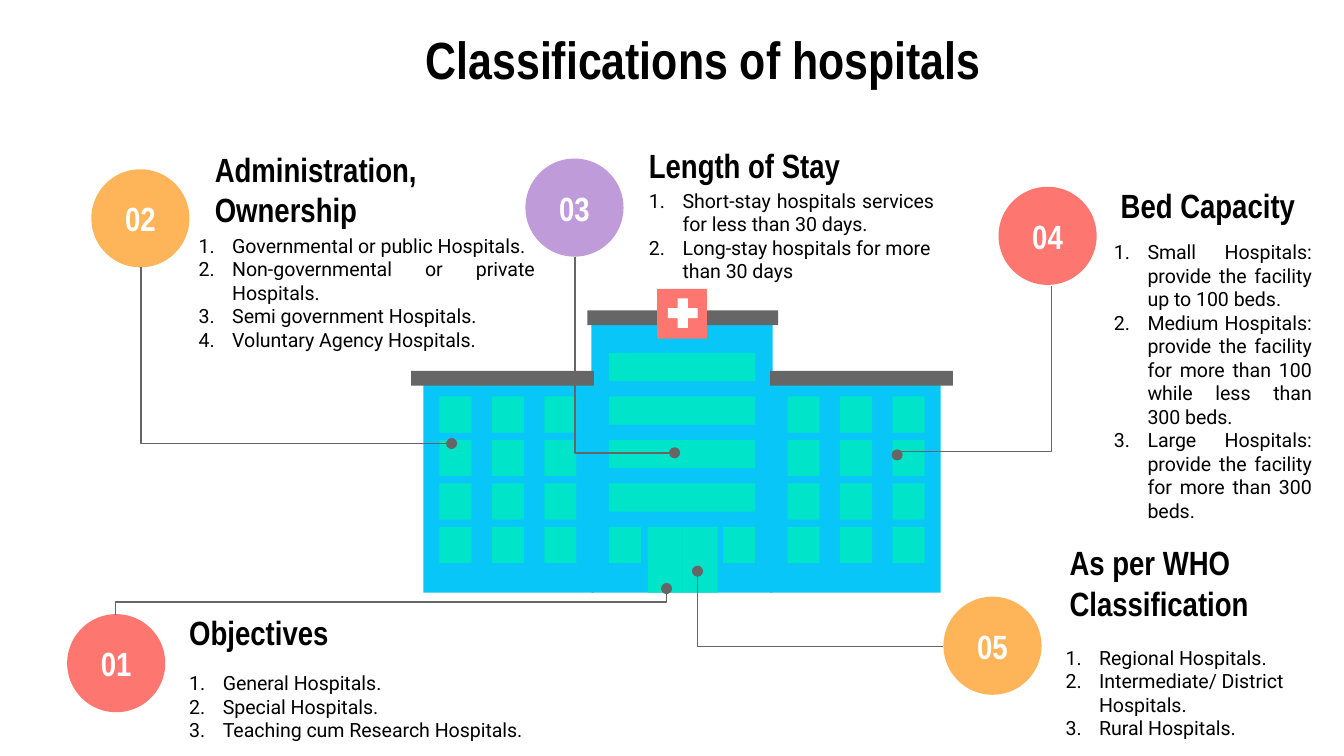
import pptx
import pptx.dml.color
import pptx.enum.shapes
import pptx.enum.text
import pptx.oxml.ns
import pptx.util
from lxml import etree

Inches = pptx.util.Inches
SHAPE = pptx.enum.shapes.MSO_SHAPE
ALIGN = pptx.enum.text.PP_ALIGN
qn = pptx.oxml.ns.qn

COLORS = {
    "black": "000000", "white": "FFFFFF", "gray": "666666", "wall": "09C6F9",
    "window": "00E4C9", "coral": "FE7670", "amber": "FEB459", "violet": "C09BD9",
}

# A 16:9 slide
presentation = pptx.Presentation()
presentation.slide_width = Inches(10)
presentation.slide_height = Inches(10 * 9 / 16)
slide = presentation.slides.add_slide(presentation.slide_layouts[6])


def add_block(kind, box, color):
    shape = slide.shapes.add_shape(kind, *map(Inches, box))
    shape.shadow.inherit = False
    shape.fill.solid()
    shape.fill.fore_color.rgb = pptx.dml.color.RGBColor.from_string(COLORS[color])
    shape.line.fill.background()
    return shape


def write_text(text, box=None, shape=None, font="Arial Narrow", size=18, color="black",
               bold=True, align=ALIGN.LEFT, numbered=False):
    """Write lines into a shape, or into a new text box when none is given."""
    shape = shape or slide.shapes.add_textbox(*map(Inches, box))
    frame = shape.text_frame
    frame.word_wrap = True
    frame.vertical_anchor = pptx.enum.text.MSO_ANCHOR.MIDDLE
    frame.margin_left = frame.margin_right = Inches(0.1)
    frame.margin_top = frame.margin_bottom = Inches(0.1)
    frame.text = text
    for paragraph in frame.paragraphs:
        paragraph.alignment = align
        if numbered:
            properties = paragraph._p.get_or_add_pPr()
            properties.set("marL", str(Inches(0.25)))
            properties.set("indent", str(Inches(-0.25)))
            bullet_color = etree.SubElement(properties, qn("a:buClr"))
            etree.SubElement(bullet_color, qn("a:srgbClr"), val=COLORS[color])
            etree.SubElement(properties, qn("a:buFont"), typeface=font)
            etree.SubElement(properties, qn("a:buAutoNum"), type="arabicPeriod")
        for style in (paragraph.font, paragraph.runs[0].font):
            style.name = font
            style.size = pptx.util.Pt(size)
            style.bold = bold
            style.color.rgb = pptx.dml.color.RGBColor.from_string(COLORS[color])
    return frame


# Walls and roofs
for box, color in [
    ((4.4, 2.42, 1.35, 1.99), "wall"),
    ((4.37, 2.31, 1.42, 0.11), "gray"),
    ((3.15, 2.86, 1.27, 1.55), "wall"),
    ((3.06, 2.76, 1.36, 0.11), "gray"),
    ((5.73, 2.86, 1.27, 1.55), "wall"),
    ((5.73, 2.76, 1.36, 0.11), "gray"),
]:
    add_block(SHAPE.RECTANGLE, box, color)

# Windows of the two wings
FLOOR_TOP, FLOOR_STEP = 2.95, 0.97 / 3
for wing_left in (3.27, 5.86):
    for row in range(4):
        for column in range(3):
            box = (wing_left + 0.39 * column, FLOOR_TOP + FLOOR_STEP * row, 0.24, 0.27)
            add_block(SHAPE.RECTANGLE, box, "window")

# Wide windows of the middle part
for row in range(-1, 3):
    add_block(SHAPE.RECTANGLE, (4.53, FLOOR_TOP + FLOOR_STEP * row, 1.09, 0.21), "window")

# Small windows and doors on the ground floor
for left, width, height in [(4.53, 0.24, 0.27), (5.38, 0.24, 0.27),
                            (4.82, 0.26, 0.49), (5.08, 0.26, 0.49)]:
    add_block(SHAPE.RECTANGLE, (left, 3.92, width, height), "window")

# Cross sign on the roof
add_block(SHAPE.RECTANGLE, (4.89, 2.15, 0.37, 0.37), "coral")
cross = add_block(SHAPE.CROSS, (4.97, 2.22, 0.22, 0.22), "white")
cross.adjustments[0] = 0.33

# Title
write_text("Classifications of hospitals", box=(0.73, 0.23, 9, 0.41), size=28,
           align=ALIGN.CENTER)

# Topics: a numbered circle, a heading and a list each
topics = [
    ("01", "coral", (0.5, 4.57), "Objectives", (1.31, 4.56, 1.67, 0.29),
     ["General Hospitals.", "Special Hospitals.", "Teaching cum Research Hospitals."],
     (1.31, 4.87, 2.77, 0.77), ALIGN.JUSTIFY),
    ("02", "amber", (0.68, 1.26), "Administration, Ownership", (1.5, 1.26, 2.04, 0.29),
     ["Governmental or public Hospitals.", "Non-governmental or private Hospitals.",
      "Semi government Hospitals.", "Voluntary Agency Hospitals."],
     (1.38, 1.96, 2.7, 0.43), ALIGN.JUSTIFY),
    ("03", "violet", (3.91, 1.18), "Length of Stay", (4.73, 1.08, 1.67, 0.29),
     ["Short-stay hospitals services for less than 30 days.",
      "Long-stay hospitals for more than 30 days"],
     (4.73, 1.54, 2.32, 0.43), ALIGN.JUSTIFY),
    ("04", "coral", (7.43, 1.39), "Bed Capacity", (8.24, 1.38, 1.67, 0.29),
     ["Small Hospitals: provide the facility up to 100 beds.",
      "Medium Hospitals: provide the facility for more than 100 while less than 300 beds.",
      "Large Hospitals: provide the facility for more than 300 beds."],
     (8.19, 1.81, 1.67, 2.05), ALIGN.JUSTIFY),
    ("05", "amber", (7.02, 4.44), "As per WHO Classification", (7.86, 4.19, 1.67, 0.29),
     ["Regional Hospitals.", "Intermediate/ District Hospitals.", "Rural Hospitals."],
     (7.83, 4.94, 1.9, 0.43), ALIGN.LEFT),
]
circles = {}
lists = {}
for number, color, corner, heading, heading_box, items, list_box, align in topics:
    circles[number] = add_block(SHAPE.OVAL, (*corner, 0.73, 0.73), color)
    write_text(number, shape=circles[number], color="white", align=ALIGN.CENTER)
    write_text(heading, box=heading_box)
    lists[number] = write_text("\n".join(items), box=list_box, font="Roboto", size=10.5,
                               bold=False, align=align, numbered=True)
# The long-stay item is the only one in its list that is not justified
lists["03"].paragraphs[1].alignment = ALIGN.LEFT

# Elbow connectors: circle, its connection site, unrotated frame, turn, flips, form, bend
elbows = [
    ("01", 0, (2.81, 2.43, 0.2, 4.1), 90, ("flipH", "flipV"), "bentConnector3", 0.5),
    ("02", 4, (1.55, 1.49, 1.31, 2.31), 270, ("flipH",), "bentConnector2", None),
    ("03", 4, (3.92, 2.27, 1.46, 0.74), 270, ("flipH",), "bentConnector2", None),
    ("04", None, (6.62, 2.18, 1.26, 1.15), 90, (), "bentConnector3", 0.98),
    ("05", 6, (5.19, 4.25, 1.83, 0.56), 180, (), "bentConnector2", None),
]
for number, site, (left, top, width, height), turn, flips, form, bend in elbows:
    connector = slide.shapes.add_connector(
        pptx.enum.shapes.MSO_CONNECTOR.ELBOW, Inches(left), Inches(top),
        Inches(left + width), Inches(top + height))
    connector.line.color.rgb = pptx.dml.color.RGBColor.from_string(COLORS["gray"])
    connector.line.width = pptx.util.Pt(0.75)
    properties = connector._element.spPr
    frame = properties.find(qn("a:xfrm"))
    frame.set("rot", str(turn * 60000))
    for flip in flips:
        frame.set(flip, "1")
    geometry = properties.find(qn("a:prstGeom"))
    geometry.set("prst", form)
    if bend is not None:
        guides = geometry.find(qn("a:avLst"))
        if guides is None:
            guides = etree.SubElement(geometry, qn("a:avLst"))
        etree.SubElement(guides, qn("a:gd"), name="adj1", fmla=f"val {round(bend * 100000)}")
    if site is not None:
        links = connector._element.find(".//" + qn("p:cNvCxnSpPr"))
        etree.SubElement(links, qn("a:stCxn"), id=str(circles[number].shape_id), idx=str(site))
    etree.SubElement(properties.find(qn("a:ln")), qn("a:tailEnd"), type="oval")
    etree.SubElement(properties, qn("a:effectLst"))

presentation.save("out.pptx")
